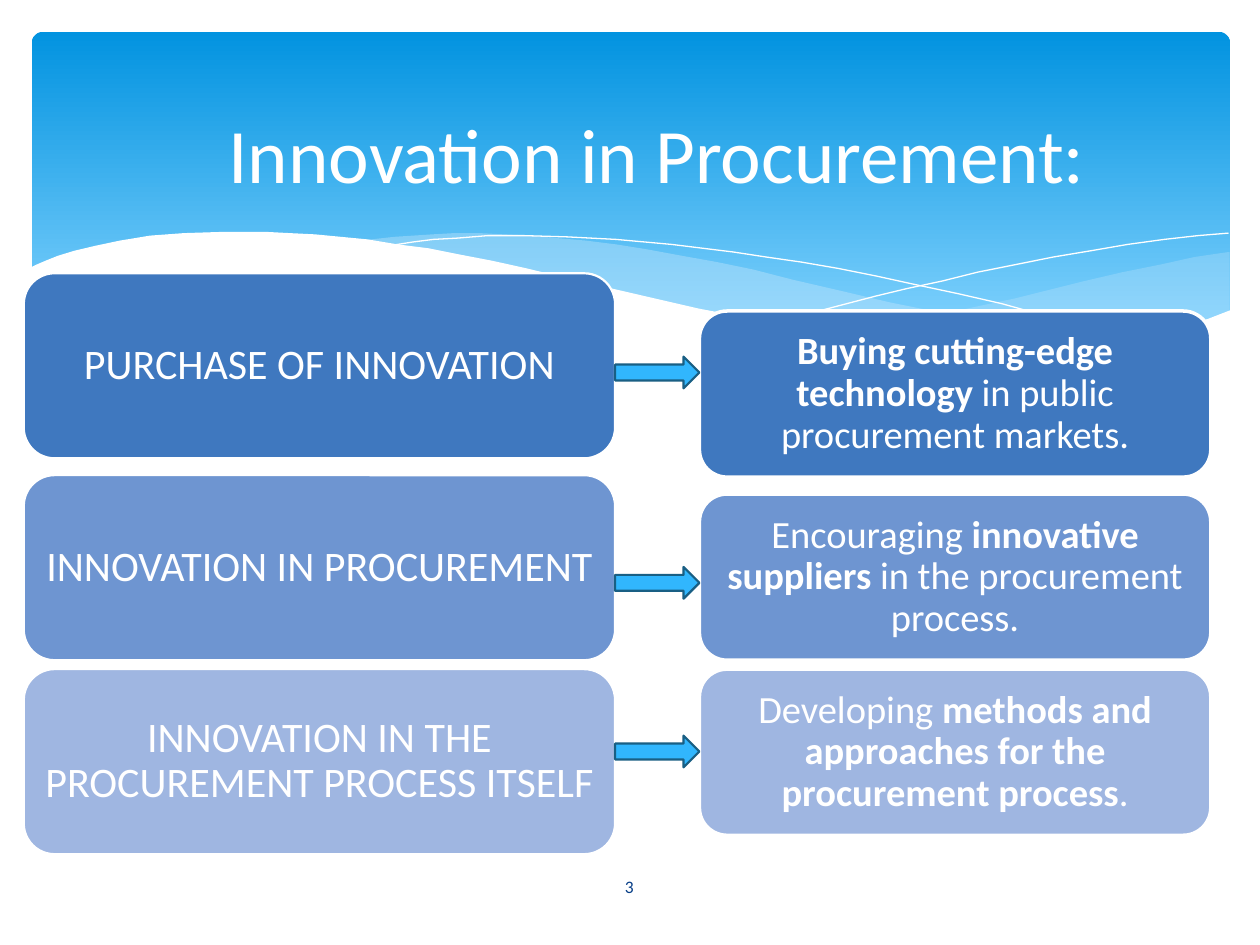
from lxml import etree
from pptx import Presentation
from pptx import util as u
from pptx.dml.color import RGBColor
from pptx.enum import shapes, text
from pptx.oxml.ns import qn

COLORS = {
    "white": "FFFFFF", "sky_top": "0293E0", "sky_bottom": "83D3FE", "mist": "C6E7FC",
    "arrow": "31B6FD", "arrow_edge": "195F84", "number": "073E87",
    "strong": "3F78BF", "medium": "6E95D1", "light": "9FB6E1",
}
FONT = "Calibri"
HUNDREDTH_INCH = u.Cm(0.0254)

RIGHT_WAVE = [
    (975, 200), (948, 204), (921, 210), (891, 216), (861, 223), (805, 237), (753, 248),
    (706, 257), (661, 265), (691, 269), (719, 272), (745, 275), (769, 277), (803, 278),
    (835, 277), (863, 275), (889, 272), (913, 267), (935, 262), (949, 257), (963, 252),
    (976, 247), (976, 200),
]
MIDDLE_WAVE = [
    (893, 273), (866, 269), (837, 265), (807, 260), (775, 254), (741, 247), (706, 240),
    (668, 231), (629, 222), (598, 214), (569, 208), (541, 203), (514, 198), (489, 194),
    (465, 191), (442, 189), (420, 187), (399, 186), (380, 185), (361, 185), (344, 186),
    (313, 188), (286, 191), (323, 196), (362, 203), (404, 211), (449, 222), (491, 232),
    (530, 240), (566, 248), (601, 255), (634, 261), (665, 266), (695, 270), (722, 274),
    (748, 276), (773, 277), (796, 278), (828, 278), (857, 277), (876, 275),
]
FALLING_LINE = [
    (309, 195), (328, 192), (344, 190), (363, 189), (387, 187), (416, 187), (450, 188),
    (489, 190), (533, 194), (582, 200), (608, 204), (636, 208), (665, 213), (695, 219),
    (727, 226), (760, 233), (795, 241), (831, 251), (869, 261), (907, 272),
]
RISING_LINE = [
    (613, 257), (653, 246), (695, 235), (720, 229), (748, 223), (776, 216), (806, 210),
    (836, 204), (866, 199), (895, 194), (924, 190), (951, 187), (975, 185),
]
FRONT_WAVE = [
    (977, 246), (959, 253), (940, 259), (920, 265), (899, 269), (875, 273), (850, 275),
    (823, 277), (793, 276), (761, 275), (726, 272), (688, 268), (648, 262), (603, 254),
    (555, 245), (503, 233), (447, 220), (418, 213), (391, 207), (365, 202), (340, 197),
    (316, 194), (292, 190), (271, 188), (250, 186), (230, 185), (211, 184), (177, 184),
    (146, 185), (119, 187), (95, 191), (76, 195), (59, 199), (46, 203), (36, 207),
    (29, 210), (23, 213), (23, 329), (977, 329),
]

ROWS = [
    ("strong", 5.51, 6.27, 7.19, "PURCHASE OF INNOVATION",
     [("Buying cutting-edge technology ", True), ("in public procurement markets.", False)]),
    ("medium", 9.58, 9.96, 11.43, "INNOVATION IN PROCUREMENT",
     [("Encouraging ", False), ("innovative suppliers ", True),
      ("in the procurement process.", False)]),
    ("light", 13.49, 13.49, 14.83, "INNOVATION IN THE PROCUREMENT PROCESS ITSELF",
     [("Developing ", False),
      ("methods and approaches for the procurement process", True), (".", False)]),
]


def rgb(name):
    return RGBColor.from_string(COLORS[name])


def paint(part, fill, edge=None, width=0):
    part.shadow.inherit = False
    if fill:
        part.fill.solid()
        part.fill.fore_color.rgb = rgb(fill)
    else:
        part.fill.background()
    if edge:
        part.line.color.rgb = rgb(edge)
        part.line.width = u.Pt(width)
    else:
        part.line.fill.background()


def add_preset(slide, kind, box):
    return slide.shapes.add_shape(kind, *(u.Cm(length) for length in box))


def add_header(slide):
    header = add_preset(slide, shapes.MSO_SHAPE.ROUNDED_RECTANGLE, (0.64, 0.64, 24.16, 6.86))
    header.adjustments[0] = 0.034
    header.shadow.inherit = False
    header.line.fill.background()
    header.fill.gradient()
    header.fill.gradient_angle = 270
    stops = header.fill.gradient_stops
    for stop, name, position in zip(stops, ("sky_top", "sky_bottom"), (0, 0.9)):
        stop.color.rgb = rgb(name)
        stop.position = position


def add_curve(slide, points, fill=None, opacity=100, edge=None):
    builder = slide.shapes.build_freeform(*points[0], scale=HUNDREDTH_INCH)
    builder.add_line_segments(points[1:], close=fill is not None)
    curve = builder.convert_to_shape()
    paint(curve, fill, edge)
    if opacity < 100:
        color = curve.fill._xPr.find(qn("a:solidFill"))[0]
        etree.SubElement(color, qn("a:alpha"), val=str(opacity * 1000))


def write(frame, runs, size, color, spacing=None):
    frame.word_wrap = True
    frame.vertical_anchor = text.MSO_ANCHOR.MIDDLE
    paragraph = frame.paragraphs[0]
    paragraph.alignment = text.PP_ALIGN.CENTER
    if spacing:
        paragraph.line_spacing = spacing
    for words, bold in runs:
        run = paragraph.add_run()
        run.text = words
        run.font.name = FONT
        run.font.size = u.Pt(size)
        run.font.bold = bold
        run.font.color.rgb = rgb(color)


def add_label(slide, box, words, size, color):
    label = slide.shapes.add_textbox(*(u.Cm(length) for length in box))
    write(label.text_frame, [(words, False)], size, color)


def add_card(slide, box, fill, edge_width, runs, size, margin):
    card = add_preset(slide, shapes.MSO_SHAPE.ROUNDED_RECTANGLE, box)
    paint(card, fill, "white", edge_width)
    frame = card.text_frame
    frame.margin_left = frame.margin_right = u.Cm(margin)
    frame.margin_top = frame.margin_bottom = u.Cm(margin)
    write(frame, runs, size, "white", 0.9)


def add_arrow(slide, top):
    arrow = add_preset(slide, shapes.MSO_SHAPE.RIGHT_ARROW, (12.4, top, 1.7, 0.64))
    paint(arrow, "arrow", "arrow_edge", 1.25)


def main():
    deck = Presentation()
    deck.slide_width, deck.slide_height = u.Cm(25.4), u.Cm(19.05)
    slide = deck.slides.add_slide(deck.slide_layouts[6])

    add_header(slide)
    add_curve(slide, RIGHT_WAVE, "mist", 29)
    add_curve(slide, MIDDLE_WAVE, "mist", 40)
    add_curve(slide, FALLING_LINE, edge="white")
    add_curve(slide, RISING_LINE, edge="white")
    add_curve(slide, FRONT_WAVE, "white")
    add_label(slide, (1.4, -0.25, 23.7, 6.65), "Innovation in Procurement:", 44, "white")

    for fill, topic_top, detail_top, arrow_top, topic, detail in ROWS:
        add_card(slide, (14.1, detail_top, 10.31, 3.35), fill, 2, detail, 22, 0.23)
        add_card(slide, (0.48, topic_top, 11.92, 3.73), fill, 1.25, [(topic, False)], 24, 0.25)
        add_arrow(slide, arrow_top)

    add_label(slide, (11.07, 17.37, 3.23, 1.02), "3", 10, "number")
    deck.save("out.pptx")


if __name__ == "__main__":
    main()
